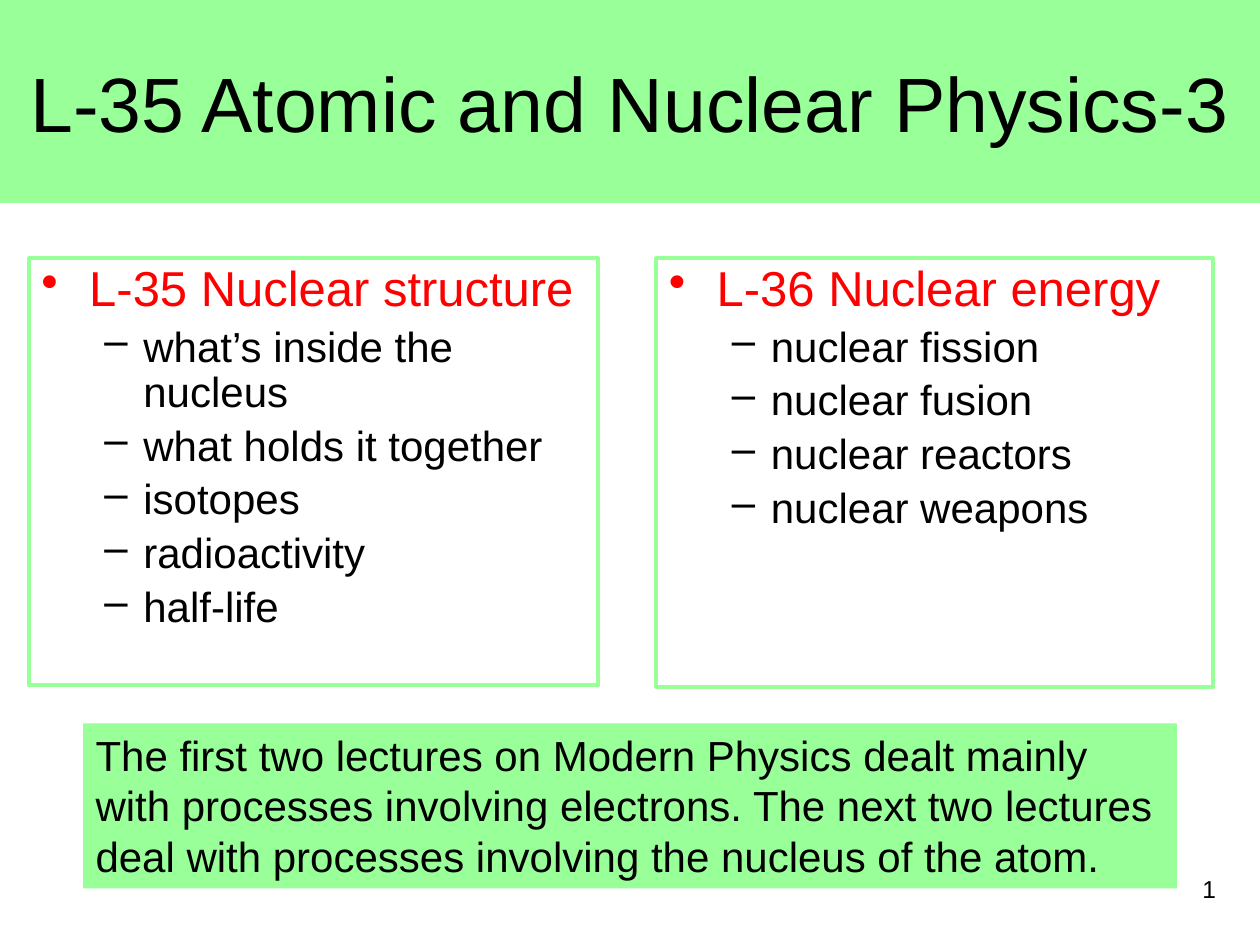
from dataclasses import dataclass

from lxml.etree import SubElement
from pptx import Presentation
from pptx.dml.color import RGBColor
from pptx.enum.shapes import MSO_SHAPE as Preset
from pptx.enum.text import MSO_ANCHOR as Anchor, MSO_AUTO_SIZE as AutoSize, PP_ALIGN as Align
from pptx.oxml.ns import qn
from pptx.util import Inches, Pt

GREEN = RGBColor(0x99, 0xFF, 0x99)
RED = RGBColor(0xFF, 0x00, 0x00)
BLACK = RGBColor(0x00, 0x00, 0x00)
FONT = "Arial"


@dataclass
class Box:
    left: float
    top: float
    width: float
    height: float

    def lengths(self) -> list:
        return [Inches(v) for v in (self.left, self.top, self.width, self.height)]


@dataclass
class BulletStyle:
    level: int
    symbol: str
    margin: float
    indent: float
    size: float
    color: RGBColor


@dataclass
class Lecture:
    box: Box
    heading: str
    topics: list[str]


HEADING = BulletStyle(0, "•", 0.38, -0.38, 28, RED)
TOPIC = BulletStyle(1, "–", 0.81, -0.31, 24, BLACK)

LECTURES = [
    Lecture(Box(0.23, 2.05, 4.52, 3.39), "L-35 Nuclear structure",
            ["what’s inside the nucleus", "what holds it together",
             "isotopes", "radioactivity", "half-life"]),
    Lecture(Box(5.21, 2.05, 4.42, 3.4), "L-36 Nuclear energy",
            ["nuclear fission", "nuclear fusion", "nuclear reactors", "nuclear weapons"]),
]
SUMMARY = ("The first two lectures on Modern Physics dealt mainly\n"
           "with processes involving electrons. The next two lectures\n"
           "deal with processes involving the nucleus of the atom.")


def set_font(paragraph, size: float, color: RGBColor) -> None:
    paragraph.font.name = FONT
    paragraph.font.size = Pt(size)
    paragraph.font.color.rgb = color


def add_rectangle(slide, box: Box, filled: bool):
    shape = slide.shapes.add_shape(Preset.RECTANGLE, *box.lengths())
    shape.shadow.inherit = False
    if filled:
        shape.fill.solid()
        shape.fill.fore_color.rgb = GREEN
        shape.line.fill.background()
    else:
        shape.fill.background()
        shape.line.color.rgb = GREEN
        shape.line.width = Pt(2.25)
    return shape


def write_text(shape, text: str, size: float, align: Align) -> None:
    paragraph = shape.text_frame.paragraphs[0]
    paragraph.text = text
    paragraph.alignment = align
    set_font(paragraph, size, BLACK)


def write_bullet(paragraph, text: str, style: BulletStyle) -> None:
    paragraph.text = text
    paragraph.level = style.level
    paragraph.alignment = Align.LEFT
    paragraph.line_spacing = 0.9
    paragraph.space_before = Pt(0.2 * style.size)
    set_font(paragraph, style.size, style.color)
    properties = paragraph._p.get_or_add_pPr()
    properties.set("marL", str(Inches(style.margin)))
    properties.set("indent", str(Inches(style.indent)))
    bullet = SubElement(properties, qn("a:buChar"), char=style.symbol)
    properties.find(qn("a:defRPr")).addprevious(bullet)


def add_lecture(slide, lecture: Lecture) -> None:
    frame = add_rectangle(slide, lecture.box, filled=False).text_frame
    frame.vertical_anchor = Anchor.TOP
    write_bullet(frame.paragraphs[0], lecture.heading, HEADING)
    for topic in lecture.topics:
        write_bullet(frame.add_paragraph(), topic, TOPIC)


def main() -> None:
    presentation = Presentation()
    presentation.slide_width, presentation.slide_height = Inches(10), Inches(7.5)
    slide = presentation.slides.add_slide(presentation.slide_layouts[6])

    # Title band
    title = add_rectangle(slide, Box(0, 0, 10, 1.61), filled=True)
    title.text_frame.vertical_anchor = Anchor.MIDDLE
    write_text(title, "L-35 Atomic and Nuclear Physics-3", 44, Align.CENTER)

    # Lecture outlines
    for lecture in LECTURES:
        add_lecture(slide, lecture)

    # Slide number
    number = slide.shapes.add_textbox(*Box(7.42, 6.89, 2.33, 0.52).lengths())
    number.text_frame.word_wrap = True
    write_text(number, "1", 14, Align.RIGHT)

    # Summary
    summary = add_rectangle(slide, Box(0.66, 5.74, 8.68, 1.31), filled=True)
    summary.text_frame.word_wrap = False
    summary.text_frame.auto_size = AutoSize.SHAPE_TO_FIT_TEXT
    summary.text_frame.vertical_anchor = Anchor.TOP
    write_text(summary, SUMMARY, 24, Align.LEFT)

    presentation.save("out.pptx")


if __name__ == "__main__":
    main()
